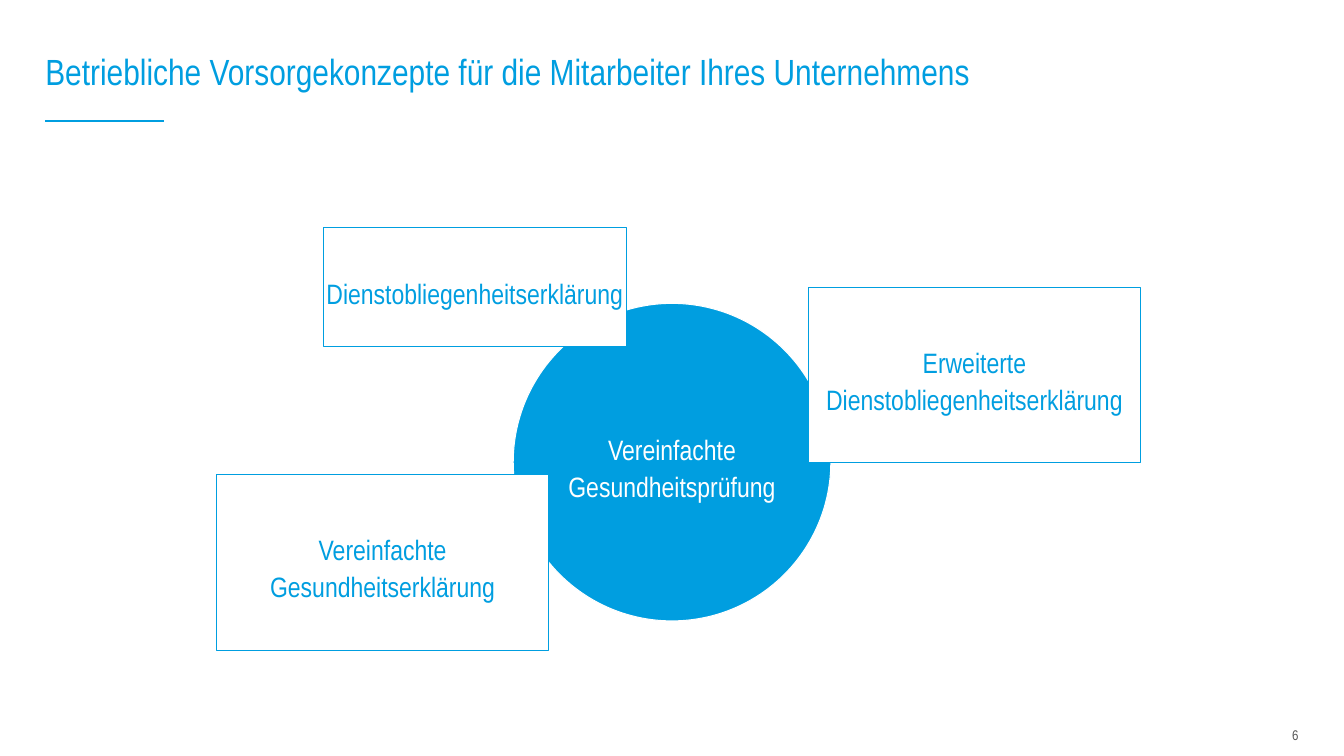
"""Build a slide on simplified health checks in company pension plans."""
from lxml import etree
from pptx import Presentation
from pptx.dml.color import RGBColor
from pptx.enum import shapes, text
from pptx.oxml import ns
from pptx.util import Inches, Pt

TITLE = "Betriebliche Vorsorgekonzepte für die Mitarbeiter Ihres Unternehmens"
PAGE_NUMBER = "6"
COLORS = {"blue": "009EE0", "white": "FFFFFF", "gray": "575757"}
FONT = "Arial Narrow"
OVAL, BOX = shapes.MSO_SHAPE.OVAL, shapes.MSO_SHAPE.RECTANGLE
DIAGRAM = [
    (OVAL, "Vereinfachte Gesundheitsprüfung", (5.09, 3.01, 3.15, 3.15)),
    (BOX, "Erweiterte Dienstobliegenheitserklärung", (8.02, 2.85, 3.29, 1.74)),
    (BOX, "Vereinfachte Gesundheitserklärung", (2.15, 4.71, 3.29, 1.74)),
    (BOX, "Dienstobliegenheitserklärung", (3.21, 2.26, 3, 1.18)),
]


def color(name):
    return RGBColor.from_string(COLORS[name])


def write(shape, words, size, color_name, align, spacing, top=0):
    frame = shape.text_frame
    frame.text = words
    frame.word_wrap = True
    frame.auto_size = text.MSO_AUTO_SIZE.NONE
    frame.vertical_anchor = text.MSO_ANCHOR.MIDDLE
    frame.margin_left = frame.margin_right = frame.margin_bottom = 0
    frame.margin_top = Inches(top)
    paragraph = frame.paragraphs[0]
    paragraph.alignment = align
    paragraph.line_spacing = spacing
    paragraph.space_before = Pt(0)
    paragraph.font.name = FONT
    paragraph.font.size = Pt(size)
    paragraph.font.color.rgb = color(color_name)


def add_title(slide):
    title = slide.shapes.title
    title.left, title.top, title.width, title.height = map(Inches, (0.45, 0.36, 10.79, 0.75))
    write(title, TITLE, 26, "blue", text.PP_ALIGN.LEFT, 0.9)
    rule = slide.shapes.add_connector(
        shapes.MSO_CONNECTOR.STRAIGHT, *map(Inches, (0.45, 1.2, 1.63, 1.2)))
    rule.line.color.rgb = color("blue")
    rule.line.width = Pt(1.5)
    etree.SubElement(rule._element.spPr, ns.qn("a:effectLst"))


def add_diagram(slide):
    for kind, label, place in DIAGRAM:
        fill, ink = ("blue", "white") if kind == OVAL else ("white", "blue")
        shape = slide.shapes.add_shape(kind, *map(Inches, place))
        shape.shadow.inherit = False
        shape.fill.solid()
        shape.fill.fore_color.rgb = color(fill)
        shape.line.color.rgb = color(ink)
        shape.line.width = Pt(0.75)
        write(shape, label, 20, ink, text.PP_ALIGN.CENTER, 1.1, top=0.08)


def main():
    presentation = Presentation()
    presentation.slide_width, presentation.slide_height = Inches(13.33), Inches(7.5)
    slide = presentation.slides.add_slide(presentation.slide_layouts[5])
    add_title(slide)
    add_diagram(slide)
    number = slide.shapes.add_textbox(*map(Inches, (12.51, 7.18, 0.37, 0.12)))
    write(number, PAGE_NUMBER, 10, "gray", text.PP_ALIGN.RIGHT, 1.1, top=0.08)
    presentation.save("out.pptx")


if __name__ == "__main__":
    main()
